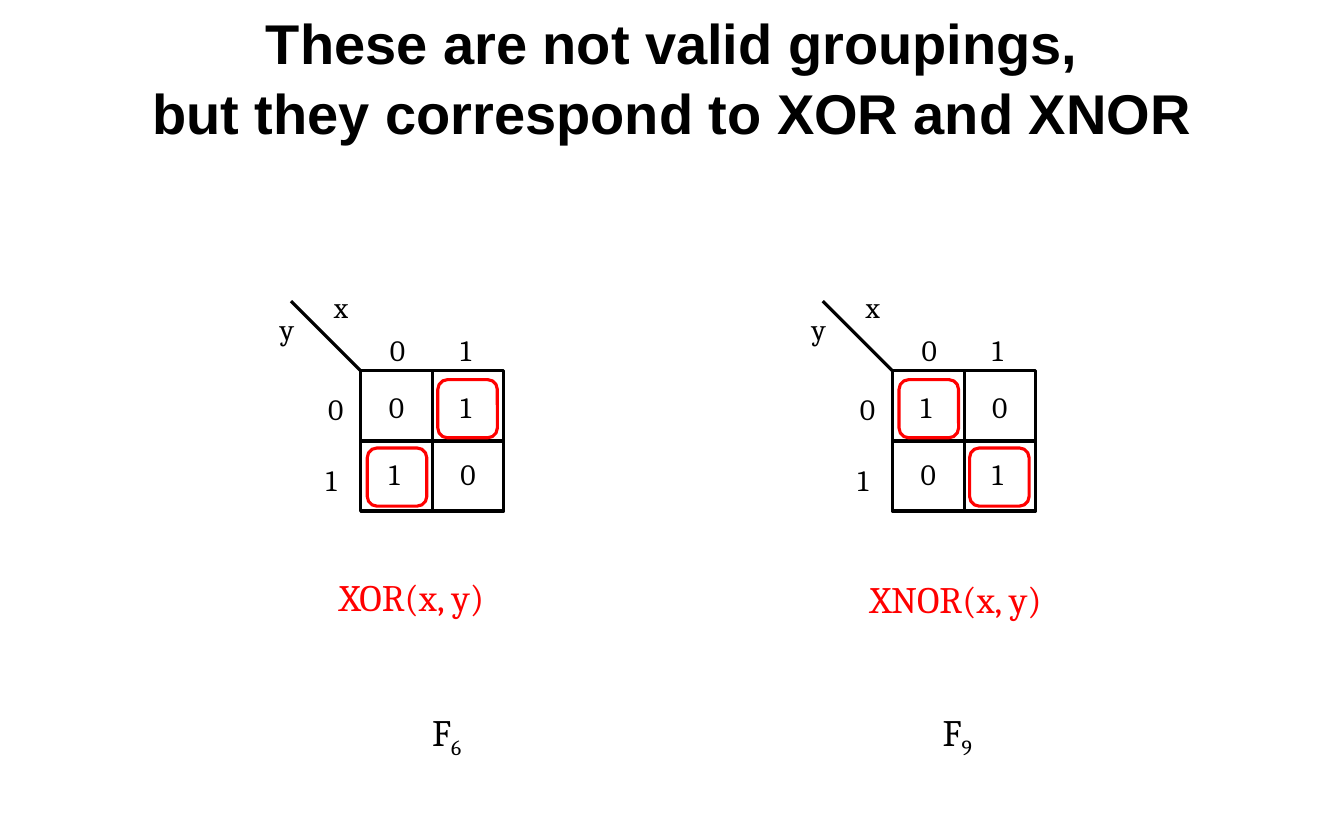
from pptx import Presentation
from pptx.dml.color import RGBColor
from pptx.enum.shapes import MSO_CONNECTOR as CONN, MSO_SHAPE as SHAPE
from pptx.enum.text import MSO_ANCHOR as ANCHOR, MSO_AUTO_SIZE as AUTO, PP_ALIGN as ALIGN
from pptx.oxml.ns import qn
from pptx.util import Cm, Pt

# Content: each map has its function, its cell values by row, and label places
TITLE = "These are not valid groupings,\nbut they correspond to XOR and XNOR"
MAPS = [
    {"left": 8.18, "cells": ["01", "10"], "name": "XOR(x, y)",
     "name_at": (7.44, 12.9, 4.17), "index": "6", "index_left": 9.55},
    {"left": 20.24, "cells": ["10", "01"], "name": "XNOR(x, y)",
     "name_at": (19.48, 12.95, 4.8), "index": "9", "index_left": 21.13},
]

# Geometry in cm; everything below is relative to a map's top left corner
MAP_TOP, MAP_W, MAP_H = 8.41, 3.25, 3.18
DIAGONAL = 1.58
AXIS_LABELS = [("y", -1.83, -1.35), ("x", -0.61, -1.85),
               ("0", -0.74, 0.46), ("1", -0.79, 2.06),
               ("0", 0.66, -0.89), ("1", 2.26, -0.89)]
CELL_X, CELL_Y = (0.64, 2.26), (0.41, 1.93)
RING_X, RING_Y = (0.15, 1.75), (0.2, 1.75)
RING_W, RING_H = 1.35, 1.32
BLACK, RED, WHITE = "000000", "FF0000", "FFFFFF"


def rgb(value):
    return RGBColor.from_string(value)


def add_text(text, x, y, w, h, size, color=BLACK, inset=0.0):
    s = shapes.add_textbox(Cm(x), Cm(y), Cm(w), Cm(h))
    tf = s.text_frame
    tf.word_wrap = False
    tf.auto_size = AUTO.SHAPE_TO_FIT_TEXT
    tf.margin_left = tf.margin_right = Cm(inset)
    tf.margin_top = tf.margin_bottom = Cm(inset / 2)
    p = tf.paragraphs[0]
    p.text = text
    p.font.name, p.font.size = "Cambria", Pt(size)
    p.font.color.rgb = rgb(color)
    return p


def add_box(kind, x, y, w, h, color, fill=None):
    s = shapes.add_shape(kind, Cm(x), Cm(y), Cm(w), Cm(h))
    s.shadow.inherit = False
    if fill:
        s.fill.solid()
        s.fill.fore_color.rgb = rgb(fill)
    else:
        s.fill.background()
    s.line.color.rgb = rgb(color)
    s.line.width = Pt(2)
    return s


def add_line(x1=0, y1=0, x2=0, y2=0):
    c = shapes.add_connector(CONN.STRAIGHT, Cm(x1), Cm(y1), Cm(x2), Cm(y2))
    c.line.color.rgb = rgb(BLACK)
    c.line.width = Pt(2)
    sp_pr = c._element.spPr
    sp_pr.append(sp_pr.makeelement(qn("a:effectLst"), {}))
    return c


def add_map(m):
    left, top = m["left"], MAP_TOP

    # Frame, dividers between the middles of its sides, and corner diagonal
    frame = add_box(SHAPE.RECTANGLE, left, top, MAP_W, MAP_H, BLACK, WHITE)
    for begin, end in ((3, 1), (2, 0)):
        divider = add_line()
        divider.begin_connect(frame, begin)
        divider.end_connect(frame, end)
    add_line(left - DIAGONAL, top - DIAGONAL, left, top)

    # Axis labels, cell values and a ring around every 1
    for text, dx, dy in AXIS_LABELS:
        add_text(text, left + dx, top + dy, 0.5, 0.81, 19)
    for row, values in enumerate(m["cells"]):
        for col, value in enumerate(values):
            add_text(value, left + CELL_X[col], top + CELL_Y[row], 0.33, 0.81, 19)
            if value == "1":
                add_box(SHAPE.ROUNDED_RECTANGLE, left + RING_X[col],
                        top + RING_Y[row], RING_W, RING_H, RED)

    # Function name and its numbered symbol
    x, y, w = m["name_at"]
    add_text(m["name"], x, y, w, 1.28, 24, RED, 0.25)
    p = add_text("F", m["index_left"], 15.95, 1.27, 1.27, 24, inset=0.25)
    r = p.add_run()
    r.text = m["index"]
    r.font._element.set("baseline", "-25000")


prs = Presentation()
prs.slide_width, prs.slide_height = Cm(30.48), Cm(19.05)
shapes = prs.slides.add_slide(prs.slide_layouts[6]).shapes

# Title
tf = shapes.add_textbox(Cm(2.54), Cm(0.05), Cm(25.4), Cm(3.33)).text_frame
tf.word_wrap = True
tf.vertical_anchor = ANCHOR.MIDDLE
p = tf.paragraphs[0]
p.text = TITLE
p.alignment = ALIGN.CENTER
p.line_spacing = 1.05
p.font.name, p.font.size, p.font.bold = "Arial", Pt(36), True
p.font.color.rgb = rgb(BLACK)

for m in MAPS:
    add_map(m)

prs.save("out.pptx")
